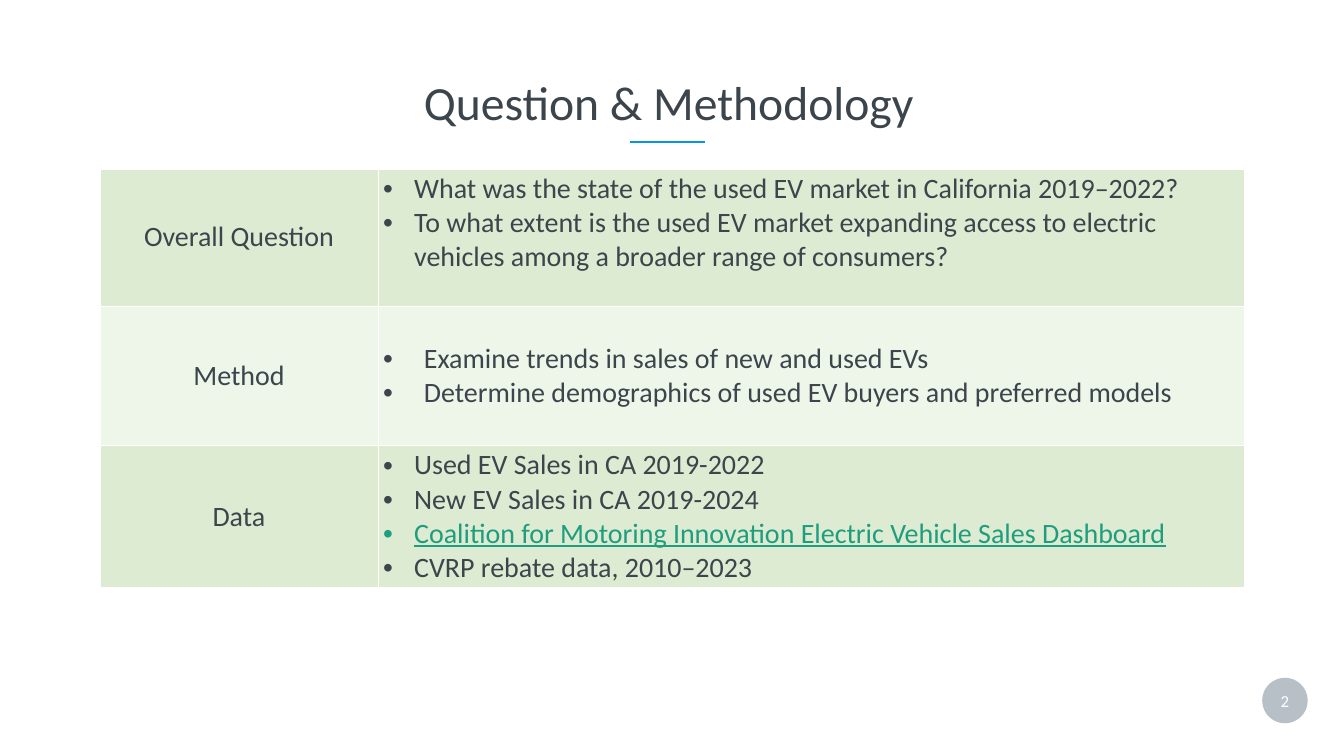
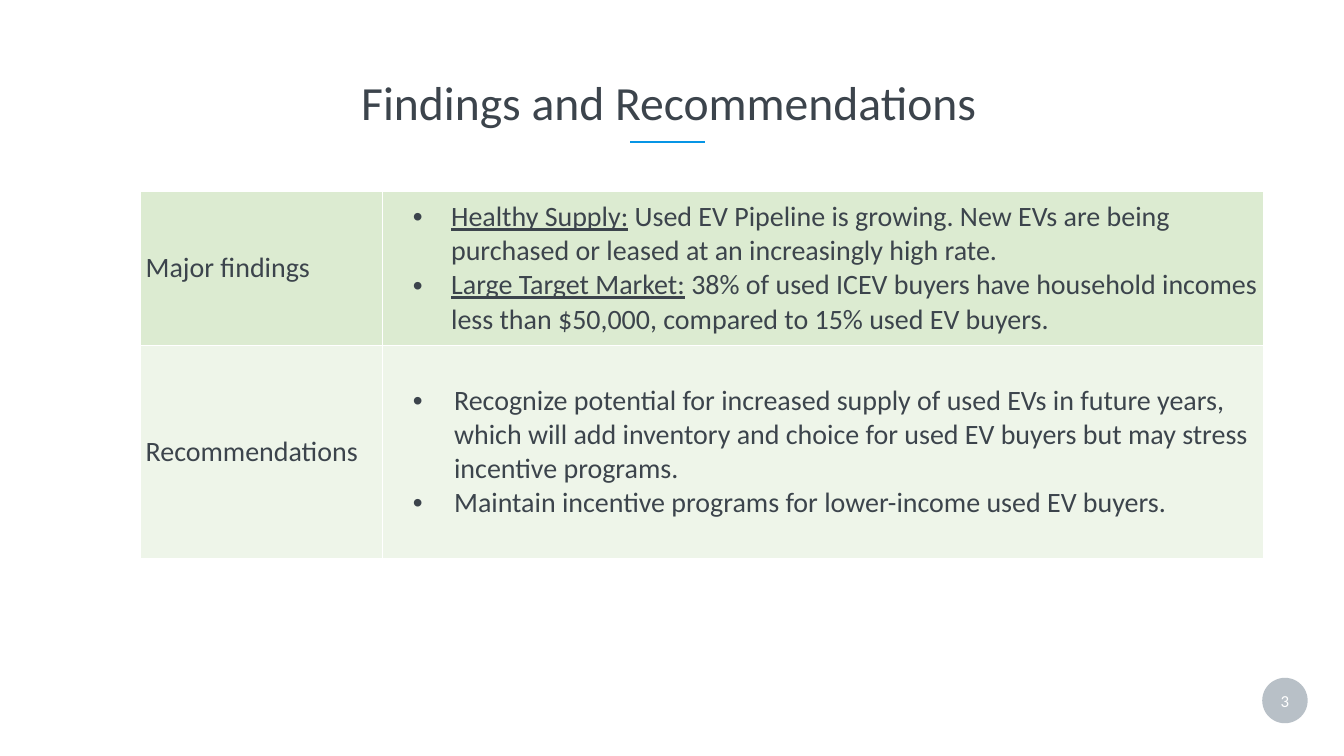
from lxml.etree import SubElement
from pptx import Presentation
from pptx.dml.color import RGBColor
from pptx.enum.shapes import MSO_CONNECTOR, MSO_SHAPE
from pptx.enum.text import MSO_ANCHOR, MSO_AUTO_SIZE, PP_ALIGN
from pptx.oxml.ns import qn
from pptx.util import Cm, Pt

INK = RGBColor(0x3C, 0x44, 0x4C)
BLUE = RGBColor(0x06, 0x95, 0xE5)
GREY = RGBColor(0xAB, 0xB4, 0xBD)
WHITE = RGBColor(0xFF, 0xFF, 0xFF)
TEAL = RGBColor(0x1F, 0x9D, 0x7F)
BANDS = [RGBColor(0xDC, 0xEB, 0xD1), RGBColor(0xEE, 0xF5, 0xE9)]

TOP, MID = MSO_ANCHOR.TOP, MSO_ANCHOR.MIDDLE
LEFT, CENTER = PP_ALIGN.LEFT, PP_ALIGN.CENTER

HEAD = {"name": "Calibri", "size": Pt(68), "bold": False}
BODY = {"name": "Calibri", "size": Pt(40), "bold": False}
PAGE = {"name": "Calibri", "size": Pt(24), "bold": False}
PLAIN = {"underline": False, "color": INK}
UNDER = {"underline": True, "color": INK}
LINK = {"underline": True, "color": TEAL}
PLACE = {"left": Cm(3.81), "top": Cm(2.16), "width": Cm(59.79), "height": Cm(4.55)}
INSET = {"margin_left": Cm(0.25), "margin_right": Cm(0.25),
         "margin_top": Cm(0.13), "margin_bottom": Cm(0.13)}
TIGHT = {"margin_left": 0, "margin_right": 0, "margin_top": 0, "margin_bottom": 0,
         "vertical_anchor": MID, "word_wrap": True}
NO_BAND = {"first_row": False, "horz_banding": False}

SLIDES = [
    {
        "title": "Question & Methodology",
        "at": (5.03, 8.51),
        "cols": (14.02, 43.66),
        "align": CENTER,
        "rows": [
            ("Overall Question", 6.91, TOP, 1.57, 1.57, [
                [("What was the state of the used EV market in California 2019–2022?", PLAIN)],
                [("To what extent is the used EV market expanding access to electric "
                  "vehicles among a broader range of consumers?", PLAIN)],
            ]),
            ("Method", 7.04, MID, 2.06, 2.06, [
                [("Examine trends in sales of new and used EVs", PLAIN)],
                [("Determine demographics of used EV buyers and preferred models", PLAIN)],
            ]),
            ("Data", 7.14, MID, 1.57, 1.57, [
                [("Used EV Sales in CA 2019-2022", PLAIN)],
                [("New EV Sales in CA 2019-2024", PLAIN)],
                [("Coalition for Motoring Innovation Electric Vehicle Sales Dashboard", LINK)],
                [("CVRP rebate data, 2010–2023", PLAIN)],
            ]),
        ],
    },
    {
        "title": "Findings and Recommendations",
        "at": (7.09, 9.65),
        "cols": (12.19, 44.35),
        "align": LEFT,
        "rows": [
            ("Major findings", 7.75, MID, 3.2, 1.93, [
                [("Healthy Supply:", UNDER),
                 (" Used EV Pipeline is growing. New EVs are being purchased or leased "
                  "at an increasingly high rate.", PLAIN)],
                [("Large Target Market:", UNDER),
                 (" 38% of used ICEV buyers have household incomes less than $50,000, "
                  "compared to 15% used EV buyers.", PLAIN)],
            ]),
            ("Recommendations", 10.74, MID, 3.35, 2.08, [
                [("Recognize potential for increased supply of used EVs in future years, "
                  "which will add inventory and choice for used EV buyers but may stress "
                  "incentive programs.", PLAIN)],
                [("Maintain incentive programs for lower-income used EV buyers.", PLAIN)],
            ]),
        ],
    },
]


def style(item, form):
    for key, value in form.items():
        if key == "color":
            item.color.rgb = value
        else:
            setattr(item, key, value)


def bullet(para, left, hang):
    props = para._p.get_or_add_pPr()
    props.set("marL", str(Cm(left)))
    props.set("indent", str(-Cm(hang)))
    SubElement(props, qn("a:buFont"), typeface="Arial")
    SubElement(props, qn("a:buChar"), char="•")


deck = Presentation()
deck.slide_width = Cm(67.72)
deck.slide_height = Cm(38.1)

for page, data in enumerate(SLIDES, 2):
    slide = deck.slides.add_slide(deck.slide_layouts[5])

    disc = slide.shapes.add_shape(MSO_SHAPE.OVAL, Cm(63.6), Cm(34.16), Cm(2.29), Cm(2.29))
    disc.shadow.inherit = False
    disc.fill.solid()
    disc.fill.fore_color.rgb = GREY
    tint = disc._element.spPr.find(".//" + qn("a:srgbClr"))
    SubElement(tint, qn("a:alpha"), val="84000")
    disc.line.fill.background()
    style(disc.text_frame, TIGHT)
    para = disc.text_frame.paragraphs[0]
    para.text = str(page)
    para.alignment = CENTER
    style(para.runs[0].font, {**PAGE, "color": WHITE})

    rule = slide.shapes.add_connector(
        MSO_CONNECTOR.STRAIGHT, Cm(31.75), Cm(7.16), Cm(35.53), Cm(7.16))
    rule.line.color.rgb = BLUE
    rule.line.width = Pt(3.6)
    SubElement(rule._element.spPr, qn("a:effectLst"))

    title = slide.shapes.title
    style(title, PLACE)
    title.text = data["title"]
    style(title.text_frame, {"vertical_anchor": MSO_ANCHOR.BOTTOM, "word_wrap": True,
                             "auto_size": MSO_AUTO_SIZE.NONE})
    para = title.text_frame.paragraphs[0]
    style(para, {"alignment": CENTER, "line_spacing": 0.9})
    style(para.runs[0].font, {**HEAD, "color": INK})

    rows, cols = data["rows"], data["cols"]
    left, top = data["at"]
    high = sum(row[1] for row in rows)
    table = slide.shapes.add_table(
        len(rows), len(cols), Cm(left), Cm(top), Cm(sum(cols)), Cm(high)).table
    style(table, NO_BAND)
    for col, wide in zip(table.columns, cols):
        col.width = Cm(wide)

    for at, (label, tall, anchor, indent, hang, points) in enumerate(rows):
        table.rows[at].height = Cm(tall)
        name, cell = table.cell(at, 0), table.cell(at, 1)
        for box in (name, cell):
            style(box, INSET)
            props = box._tc.get_or_add_tcPr()
            for side in ("lnL", "lnR", "lnT", "lnB"):
                edge = SubElement(props, qn("a:" + side), w=str(Pt(1)))
                fill = SubElement(edge, qn("a:solidFill"))
                SubElement(fill, qn("a:srgbClr"), val=str(WHITE))
            box.fill.solid()
            box.fill.fore_color.rgb = BANDS[at % 2]

        name.vertical_anchor = MID
        para = name.text_frame.paragraphs[0]
        para.text = label
        para.alignment = data["align"]
        style(para.runs[0].font, {**BODY, **PLAIN})

        cell.vertical_anchor = anchor
        frame = cell.text_frame
        for spot, parts in enumerate(points):
            para = frame.add_paragraph() if spot else frame.paragraphs[0]
            bullet(para, indent, hang)
            for text, form in parts:
                run = para.add_run()
                run.text = text
                style(run.font, {**BODY, **form})

deck.save("out.pptx")
